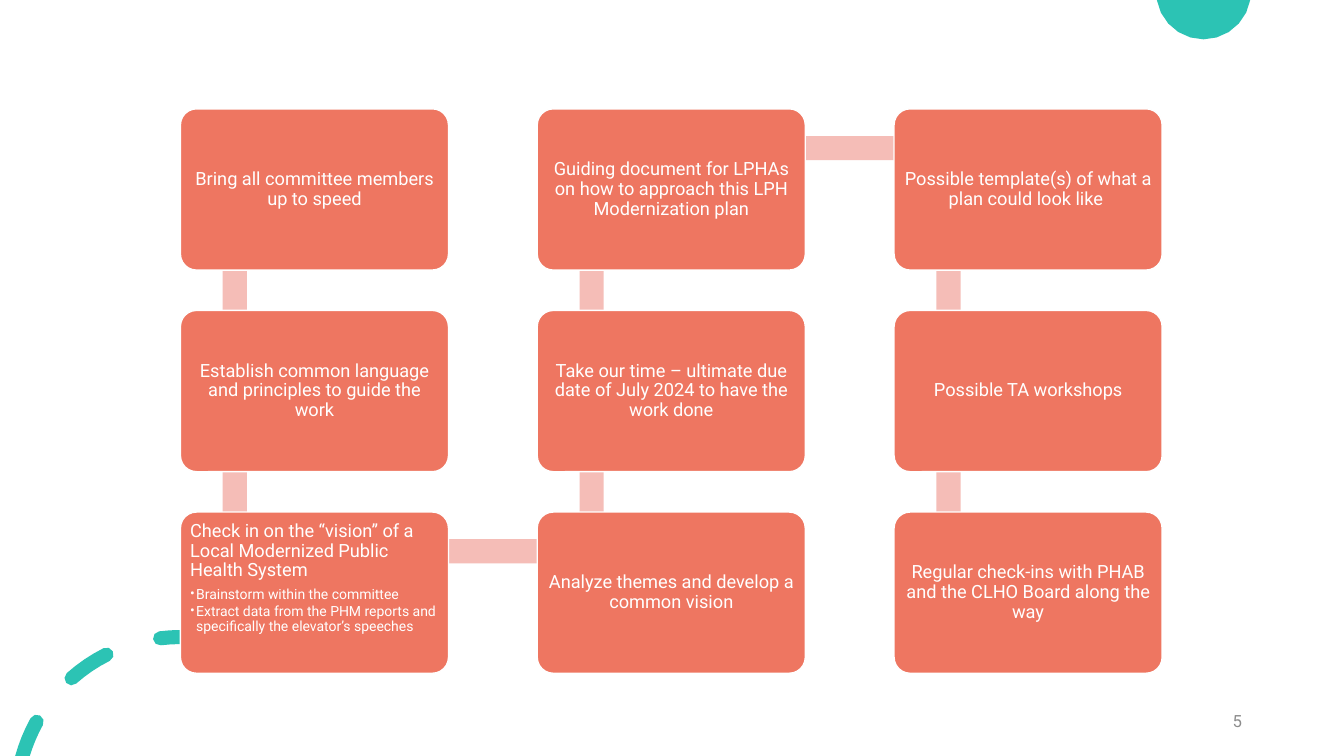
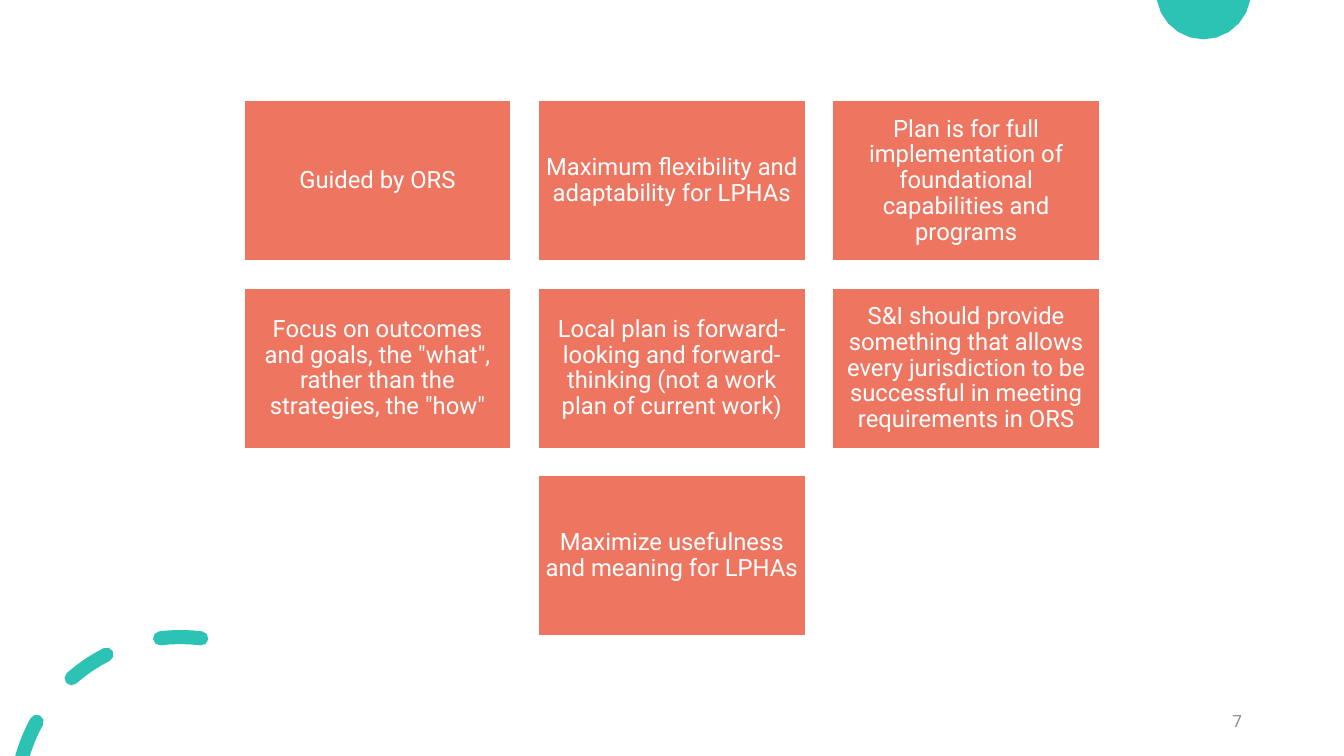
from math import asin, cos, degrees, radians, sin
from lxml.etree import SubElement
from pptx import Presentation
from pptx.dml.color import RGBColor
from pptx.enum.shapes import MSO_SHAPE
from pptx.enum.text import MSO_ANCHOR, PP_ALIGN
from pptx.oxml.ns import qn
from pptx.util import Inches, Pt

TEAL = RGBColor(0x2C, 0xC3, 0xB4)
CORAL = RGBColor(0xEE, 0x76, 0x61)
PINK = RGBColor(0xF5, 0xBD, 0xB7)
WHITE = RGBColor(0xFF, 0xFF, 0xFF)
GRAY = RGBColor(0x8C, 0x8C, 0x8C)
FONT = "Roboto"
PAGE_WIDTH, PAGE_HEIGHT = 40 / 3, 7.5


def arc(center_x, center_y, radius, start, end, steps=4):
    angles = [radians(start + (end - start) * step / steps) for step in range(steps + 1)]
    return [(Inches(center_x + radius * cos(angle)), Inches(center_y - radius * sin(angle)))
            for angle in angles]


def add_block(page, preset, left, top, width, height, color):
    block = page.shapes.add_shape(preset, Inches(left), Inches(top), Inches(width), Inches(height))
    block.shadow.inherit = False
    block.fill.solid()
    block.fill.fore_color.rgb = color
    block.line.fill.background()
    return block


deck = Presentation()
deck.slide_width = Inches(PAGE_WIDTH)
deck.slide_height = Inches(PAGE_HEIGHT)
layout = deck.slide_layouts[6]
pages = [deck.slides.add_slide(layout) for _ in range(2)]

disc_y, disc_radius = -0.08, 0.47
disc_cut = degrees(asin(-disc_y / disc_radius))
disc = arc(11.94, disc_y, disc_radius, 180 + disc_cut, 360 - disc_cut, 10)

ring_x, ring_y, ring_radius, half_stroke = 1.79, 7.95, 1.63, 0.07
outer_radius, inner_radius = ring_radius + half_stroke, ring_radius - half_stroke
outer_cut, inner_cut = [180 - degrees(asin((ring_y - PAGE_HEIGHT) / radius))
                        for radius in (outer_radius, inner_radius)]
dashes = []
for outer_start, inner_start, end in [
    (outer_cut, inner_cut, 151), (131.5, 131.5, 116.7), (97.1, 97.1, 82.7)
]:
    end_x = ring_x + ring_radius * cos(radians(end))
    end_y = ring_y - ring_radius * sin(radians(end))
    dash = arc(ring_x, ring_y, outer_radius, outer_start, end)
    dash += arc(end_x, end_y, half_stroke, end, end - 180)[1:-1]
    dash += arc(ring_x, ring_y, inner_radius, end, inner_start)
    if outer_start == inner_start:
        start_x = ring_x + ring_radius * cos(radians(outer_start))
        start_y = ring_y - ring_radius * sin(radians(outer_start))
        dash += arc(start_x, start_y, half_stroke, outer_start + 180, outer_start)[1:-1]
    dashes.append(dash)

for outlines in [[disc], dashes]:
    builder = pages[0].shapes.build_freeform(*outlines[0][0])
    builder.add_line_segments(outlines[0][1:], close=True)
    for outline in outlines[1:]:
        builder.move_to(*outline[0])
        builder.add_line_segments(outline[1:], close=True)
    ornament = builder.convert_to_shape()
    ornament.shadow.inherit = False
    ornament.fill.solid()
    ornament.fill.fore_color.rgb = TEAL
    ornament.line.fill.background()
    layout.shapes.element.append(ornament.element)

step_texts = {
    (0, 0): ["Bring all committee members up to speed"],
    (0, 1): ["Establish common language and principles to guide the work"],
    (0, 2): [
        "Check in on the “vision” of a Local Modernized Public Health System",
        "Brainstorm within the committee",
        "Extract data from the PHM reports and specifically the elevator’s speeches",
    ],
    (1, 2): ["Analyze themes and develop a common vision"],
    (1, 1): ["Take our time – ultimate due date of July 2024 to have the work done"],
    (1, 0): ["Guiding document for LPHAs on how to approach this LPH Modernization plan"],
    (2, 0): ["Possible template(s) of what a plan could look like "],
    (2, 1): ["Possible TA workshops"],
    (2, 2): ["Regular check-ins with PHAB and the CLHO Board along the way"],
}
principle_texts = {
    (0, 0): ["Guided by ORS"],
    (1, 0): ["Maximum flexibility and adaptability for LPHAs"],
    (2, 0): ["Plan is for full implementation of foundational capabilities and programs"],
    (0, 1): ['Focus on outcomes and goals, the "what", rather than the strategies, the "how"'],
    (1, 1): ["Local plan is forward-looking and forward-thinking (not a work plan of current work)"],
    (2, 1): [
        "S&I should provide something that allows every jurisdiction to be successful "
        "in meeting requirements in ORS"
    ],
    (1, 2): ["Maximize usefulness and meaning for LPHAs"],
}

grid_left, grid_top, column_step, row_step = 1.79, 1.08, 3.54, 2
card_width, card_height, bar_size = 2.66, 1.6, 0.24
route = list(step_texts)
for (column, row), (next_column, next_row) in zip(route, route[1:]):
    left = grid_left + column * column_step
    top = grid_top + min(row, next_row) * row_step
    if column == next_column:
        bar = (left + 0.42, top + 0.39, bar_size, row_step)
    else:
        bar = (left + 0.54, top + 0.27, column_step, bar_size)
    add_block(pages[0], MSO_SHAPE.RECTANGLE, *bar, PINK)

designs = [
    (pages[0], step_texts, MSO_SHAPE.ROUNDED_RECTANGLE, (grid_left, grid_top),
     (column_step, row_step), (card_width, card_height), 0.05, 13, "5"),
    (pages[1], principle_texts, MSO_SHAPE.RECTANGLE, (2.42, 1),
     (2.92, 1.86), (2.65, 1.59), 0.07, 17, "7"),
]
for page, texts, preset, origin, pitch, size, inset, font_size, number in designs:
    for (column, row), lines in texts.items():
        card = add_block(page, preset, origin[0] + column * pitch[0],
                         origin[1] + row * pitch[1], *size, CORAL)
        if preset == MSO_SHAPE.ROUNDED_RECTANGLE:
            card.adjustments[0] = 0.1
        card.line.color.rgb = WHITE
        card.line.width = Pt(1)
        frame = card.text_frame
        frame.word_wrap = True
        frame.margin_left = frame.margin_right = Inches(inset)
        frame.margin_top = frame.margin_bottom = Inches(inset)
        has_list = len(lines) > 1
        frame.vertical_anchor = MSO_ANCHOR.TOP if has_list else MSO_ANCHOR.MIDDLE
        frame.text = "\n".join(lines)
        for index, paragraph in enumerate(frame.paragraphs):
            paragraph.alignment = PP_ALIGN.LEFT if has_list else PP_ALIGN.CENTER
            paragraph.line_spacing = 0.9
            paragraph.space_after = Pt(1.5 if index else 4.5)
            if index:
                paragraph.level = 1
                properties = paragraph._p.get_or_add_pPr()
                properties.set("marL", str(Inches(0.06)))
                properties.set("indent", str(-Inches(0.06)))
                SubElement(properties, qn("a:buFont")).set("typeface", FONT)
                SubElement(properties, qn("a:buChar")).set("char", "•")
            for span in paragraph.runs:
                span.font.name = FONT
                span.font.size = Pt(10 if index else font_size)
                span.font.color.rgb = WHITE

    box = page.shapes.add_textbox(Inches(9.42), Inches(6.95), Inches(3), Inches(0.4))
    box.text_frame.word_wrap = True
    box.text_frame.vertical_anchor = MSO_ANCHOR.MIDDLE
    box.text_frame.text = number
    paragraph = box.text_frame.paragraphs[0]
    paragraph.alignment = PP_ALIGN.RIGHT
    span = paragraph.runs[0]
    span.font.name = FONT
    span.font.size = Pt(12)
    span.font.color.rgb = GRAY

deck.save("out.pptx")
